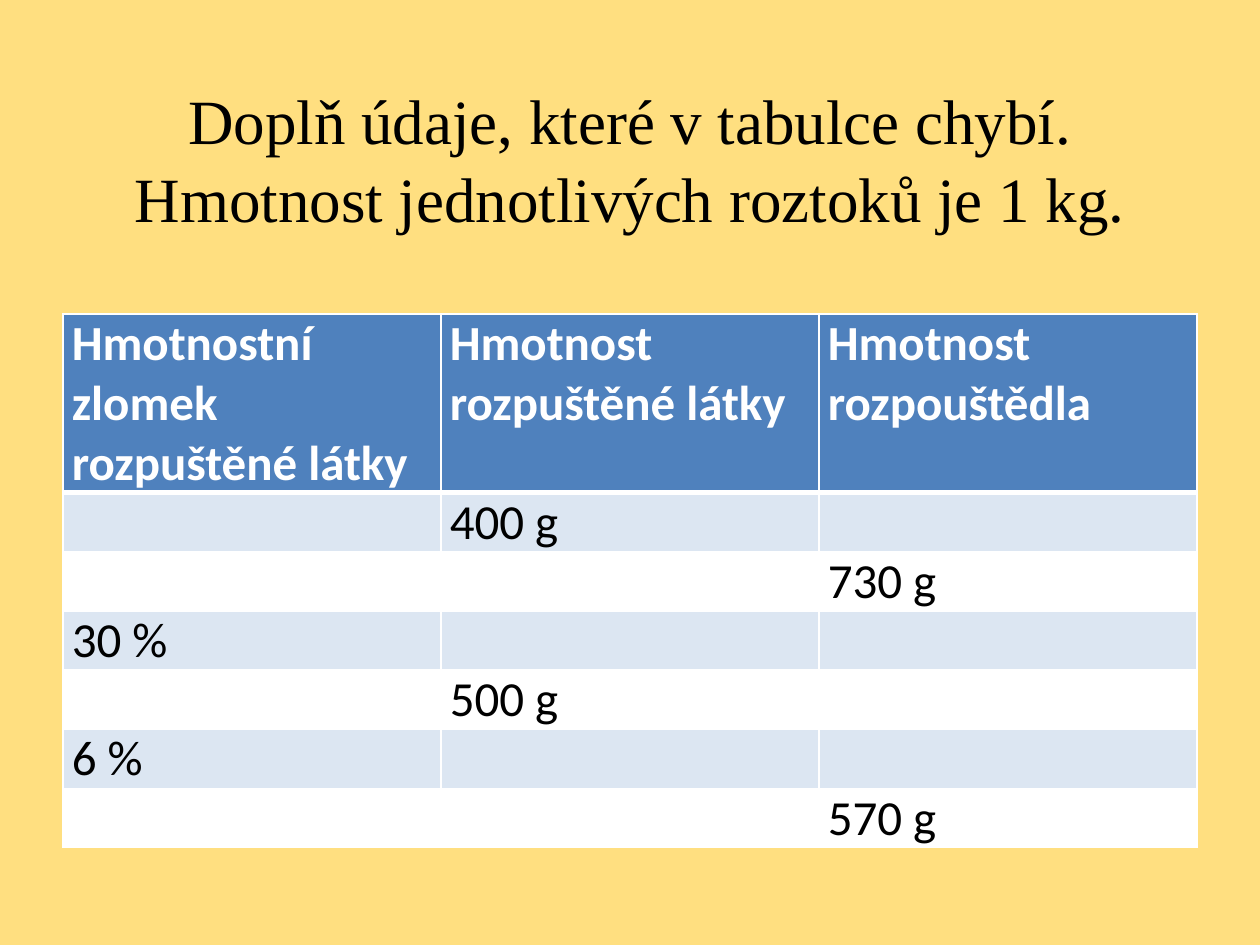
"""Build a worksheet slide with a table of solution masses to complete."""
from lxml.etree import SubElement
from pptx import Presentation
from pptx.dml.color import RGBColor
from pptx.enum.text import MSO_ANCHOR, PP_ALIGN
from pptx.oxml.ns import qn
from pptx.util import Inches, Pt

BACKGROUND = RGBColor(0xFF, 0xDF, 0x80)
BLACK = RGBColor(0, 0, 0)
WHITE = RGBColor(0xFF, 0xFF, 0xFF)
HEADER_BLUE = RGBColor(0x4F, 0x81, 0xBD)
BAND_BLUE = RGBColor(0xDC, 0xE6, 0xF2)

TASK = "Doplň údaje, které v tabulce chybí. Hmotnost jednotlivých roztoků je 1 kg."
SOLUTIONS = [
    ("Hmotnostní zlomek rozpuštěné látky", "Hmotnost rozpuštěné látky", "Hmotnost rozpouštědla"),
    ("", "400 g", ""),
    ("", "", "730 g"),
    ("30 %", "", ""),
    ("", "500 g", ""),
    ("6 %", "", ""),
    ("", "", "570 g"),
]
HEADER_HEIGHT, ROW_HEIGHT = 1.42, 0.47


def add_borders(cell, bottom_width):
    properties = cell._tc.get_or_add_tcPr()
    widths = {"a:lnL": 1, "a:lnR": 1, "a:lnT": 1, "a:lnB": bottom_width}
    for position, (side, width) in enumerate(widths.items()):
        line = SubElement(properties, qn(side), w=str(Pt(width)))
        fill = SubElement(line, qn("a:solidFill"))
        SubElement(fill, qn("a:srgbClr"), val=str(WHITE))
        properties.insert(position, line)


def add_task(slide):
    box = slide.shapes.add_textbox(Inches(0.5), Inches(0.6), Inches(9), Inches(1.3))
    frame = box.text_frame
    frame.word_wrap = True
    frame.vertical_anchor = MSO_ANCHOR.MIDDLE
    paragraph = frame.paragraphs[0]
    paragraph.text = TASK
    paragraph.alignment = PP_ALIGN.CENTER
    paragraph.line_spacing = 1.03
    paragraph.font.name = "Times New Roman"
    paragraph.font.size = Pt(36)
    paragraph.font.color.rgb = BLACK


def add_solutions(slide):
    row_count, column_count = len(SOLUTIONS), len(SOLUTIONS[0])
    height = HEADER_HEIGHT + ROW_HEIGHT * (row_count - 1)
    table = slide.shapes.add_table(
        row_count, column_count, Inches(0.5), Inches(2.49), Inches(9), Inches(height)
    ).table
    for row, values in enumerate(SOLUTIONS):
        is_header = row == 0
        table.rows[row].height = Inches(HEADER_HEIGHT if is_header else ROW_HEIGHT)
        band = HEADER_BLUE if is_header else BAND_BLUE if row % 2 else WHITE
        for column, value in enumerate(values):
            cell = table.cell(row, column)
            cell.margin_left = cell.margin_right = Inches(0.07)
            cell.margin_top = cell.margin_bottom = 0
            cell.fill.solid()
            cell.fill.fore_color.rgb = band
            add_borders(cell, 3 if is_header else 1)
            paragraph = cell.text_frame.paragraphs[0]
            paragraph.text = value
            paragraph.font.name = "Calibri"
            paragraph.font.size = Pt(28)
            paragraph.font.bold = is_header
            paragraph.font.color.rgb = WHITE if is_header else BLACK


def main():
    presentation = Presentation()
    presentation.slide_width, presentation.slide_height = Inches(10), Inches(7.5)
    slide = presentation.slides.add_slide(presentation.slide_layouts[6])
    slide.background.fill.solid()
    slide.background.fill.fore_color.rgb = BACKGROUND
    add_task(slide)
    add_solutions(slide)
    presentation.save("out.pptx")


if __name__ == "__main__":
    main()
